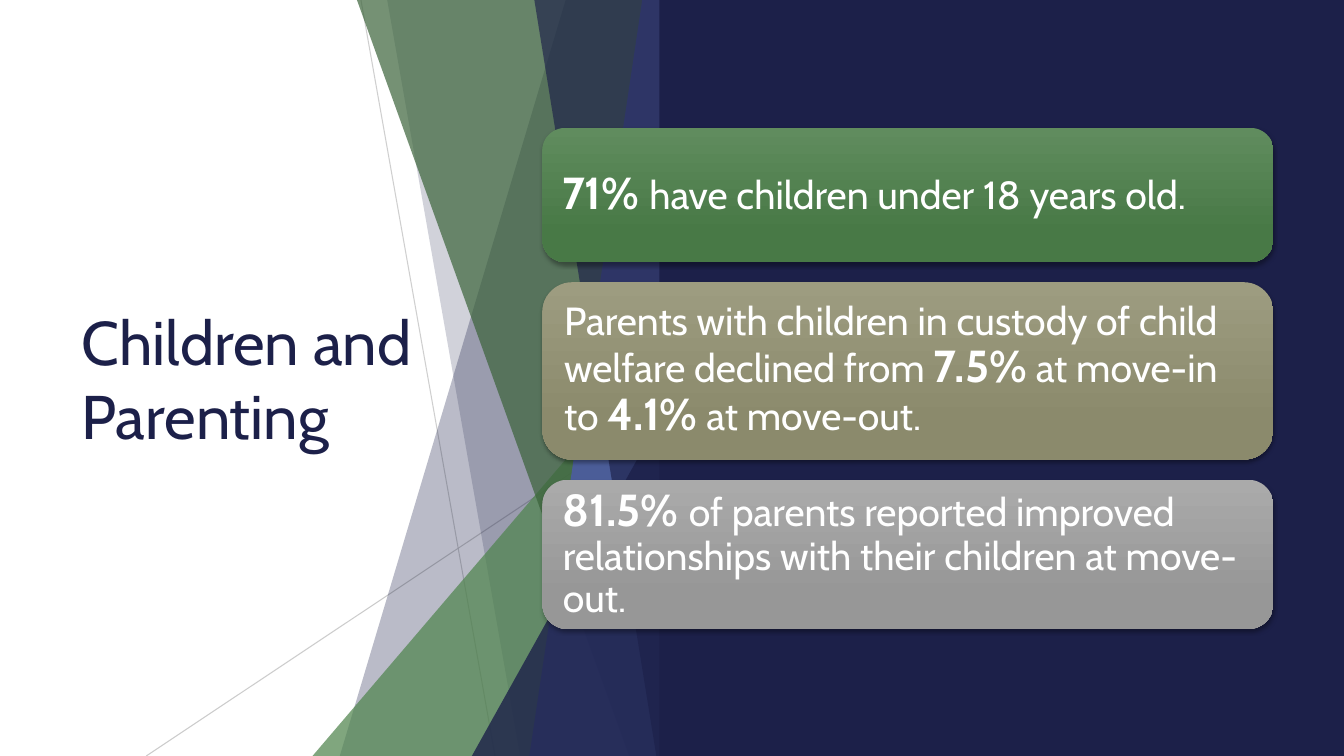
import pptx
import pptx.dml.color
import pptx.enum.shapes
import pptx.enum.text
import pptx.oxml
import pptx.util
from pptx.util import Inches

SHAPES = pptx.enum.shapes.MSO_SHAPE
NAVY, GREEN, FOREST, BLUE = "1C2049", "4F844D", "3B633A", "4E57BB"
WHITE, LINE_GRAY = "FFFFFF", "BFBFBF"
NAMESPACE = 'xmlns:a="http://schemas.openxmlformats.org/drawingml/2006/main"'


def color(value):
    return pptx.dml.color.RGBColor.from_string(value)


class SlideBuilder:
    """Draws styled elements on the current slide."""

    font = "Cabin"

    def __init__(self, page):
        self.page = page
        self.shapes = page.shapes

    def set_alpha(self, fill, percent):
        choice = fill.fore_color._xFill.find(pptx.oxml.ns.qn("a:srgbClr"))
        choice.append(pptx.oxml.parse_xml(f'<a:alpha {NAMESPACE} val="{percent * 1000}"/>'))

    def paint(self, shape, fill, alpha=100):
        shape.shadow.inherit = False
        shape.line.fill.background()
        shape.fill.solid()
        shape.fill.fore_color.rgb = color(fill)
        if alpha < 100:
            self.set_alpha(shape.fill, alpha)

    def line(self, start, end, alpha):
        connector = self.shapes.add_connector(
            pptx.enum.shapes.MSO_CONNECTOR.STRAIGHT,
            *(Inches(value) for value in (*start, *end)))
        connector.line.width = pptx.util.Pt(0.75)
        connector.line.color.rgb = color(LINE_GRAY)
        self.set_alpha(connector.line.fill, alpha)
        connector._element.spPr.append(pptx.oxml.parse_xml(f"<a:effectLst {NAMESPACE}/>"))

    def band(self, top_left, bottom_left, bottom_right, fill, alpha, top_right=6.66):
        points = [(top_left, 0), (top_right, 0), (bottom_right, 7.5), (bottom_left, 7.5)]
        corners = [(Inches(left), Inches(top)) for left, top in points]
        builder = self.shapes.build_freeform(*corners[0])
        builder.add_line_segments(corners[1:])
        self.paint(builder.convert_to_shape(), fill, alpha)

    def triangle(self, left, top, width, fill, alpha):
        shape = self.shapes.add_shape(
            SHAPES.ISOSCELES_TRIANGLE, Inches(left), Inches(top),
            Inches(width), Inches(7.5 - top))
        shape.adjustments[0] = 1
        self.paint(shape, fill, alpha)

    def rectangle(self, left, top, width, height, fill):
        shape = self.shapes.add_shape(
            SHAPES.RECTANGLE, Inches(left), Inches(top), Inches(width), Inches(height))
        self.paint(shape, fill)

    def title(self, left, top, width, height, text):
        box = self.shapes.add_textbox(Inches(left), Inches(top), Inches(width), Inches(height))
        frame = box.text_frame
        frame.word_wrap = True
        frame.vertical_anchor = pptx.enum.text.MSO_ANCHOR.MIDDLE
        para = frame.paragraphs[0]
        para.text = text
        para.font.name = self.font
        para.font.size = pptx.util.Pt(44)
        para.font.color.rgb = color(NAVY)

    def card(self, top, height, colors, spans):
        shape = self.shapes.add_shape(
            SHAPES.ROUNDED_RECTANGLE, Inches(5.38), Inches(top), Inches(7.25), Inches(height))
        shape.line.fill.background()
        shape.fill.gradient()
        shape.fill.gradient_angle = 270
        for stop, value, position in zip(shape.fill.gradient_stops, colors, (0, 0.78)):
            stop.color.rgb = color(value)
            stop.position = position
        shape.shadow.inherit = False
        effects = shape._element.spPr.find(pptx.oxml.ns.qn("a:effectLst"))
        effects.append(pptx.oxml.parse_xml(
            f'<a:outerShdw {NAMESPACE} blurRad="38100" dist="25400" dir="5400000" '
            'rotWithShape="0"><a:srgbClr val="000000"><a:alpha val="35000"/>'
            '</a:srgbClr></a:outerShdw>'))
        frame = shape.text_frame
        frame.word_wrap = True
        frame.vertical_anchor = pptx.enum.text.MSO_ANCHOR.MIDDLE
        frame.margin_left = frame.margin_right = Inches(0.13)
        frame.margin_top = frame.margin_bottom = Inches(0.13)
        para = frame.paragraphs[0]
        para.alignment = pptx.enum.text.PP_ALIGN.LEFT
        para.line_spacing = 0.9
        para.font.name = self.font
        para.font.color.rgb = color(WHITE)
        for text, bold in spans:
            span = para.add_run()
            span.text = text
            span.font.bold = bold
            span.font.size = pptx.util.Pt(32 if bold else 28)


def main():
    deck = pptx.Presentation()
    deck.slide_width, deck.slide_height = Inches(13.33), Inches(7.5)
    slide = SlideBuilder(deck.slides.add_slide(deck.slide_layouts[6]))

    slide.title(0.71, 1.51, 3.88, 4.48, "Children and Parenting")

    slide.line((3.58, 0), (4.91, 7.5), 75)
    slide.line((6.66, 4.03), (1.45, 7.5), 80)
    slide.band(5.61, 3.37, 6.66, NAVY, 30)
    slide.band(3.84, 5.16, 6.66, NAVY, 20)
    slide.triangle(3.1, 3.33, 3.56, GREEN, 72)
    slide.band(3.54, 6.24, 6.66, FOREST, 70)
    slide.band(6.37, 5.25, 6.66, BLUE, 70)
    slide.band(5.3, 6.51, 6.66, NAVY, 65)
    slide.triangle(4.68, 3.93, 1.99, NAVY, 80)
    slide.rectangle(6.54, 0, 6.79, 7.5, NAVY)

    cards = [
        (1.33, ("608C5E", "487946"),
         [("71% ", True), ("have children under 18 years old.", False)]),
        (1.76, ("9D9C80", "8B8A6C"),
         [("Parents with children in custody of child welfare declined from ", False),
          ("7.5%", True), (" at move-in to ", False),
          ("4.1%", True), (" at move-out.", False)]),
        (1.48, ("AAAAAA", "979797"),
         [("81.5% ", True),
          ("of parents reported improved relationships with their children at move-out.",
           False)]),
    ]
    top = 1.27
    for height, colors, spans in cards:
        slide.card(top, height, colors, spans)
        top += height + 0.2

    deck.save("out.pptx")


if __name__ == "__main__":
    main()
